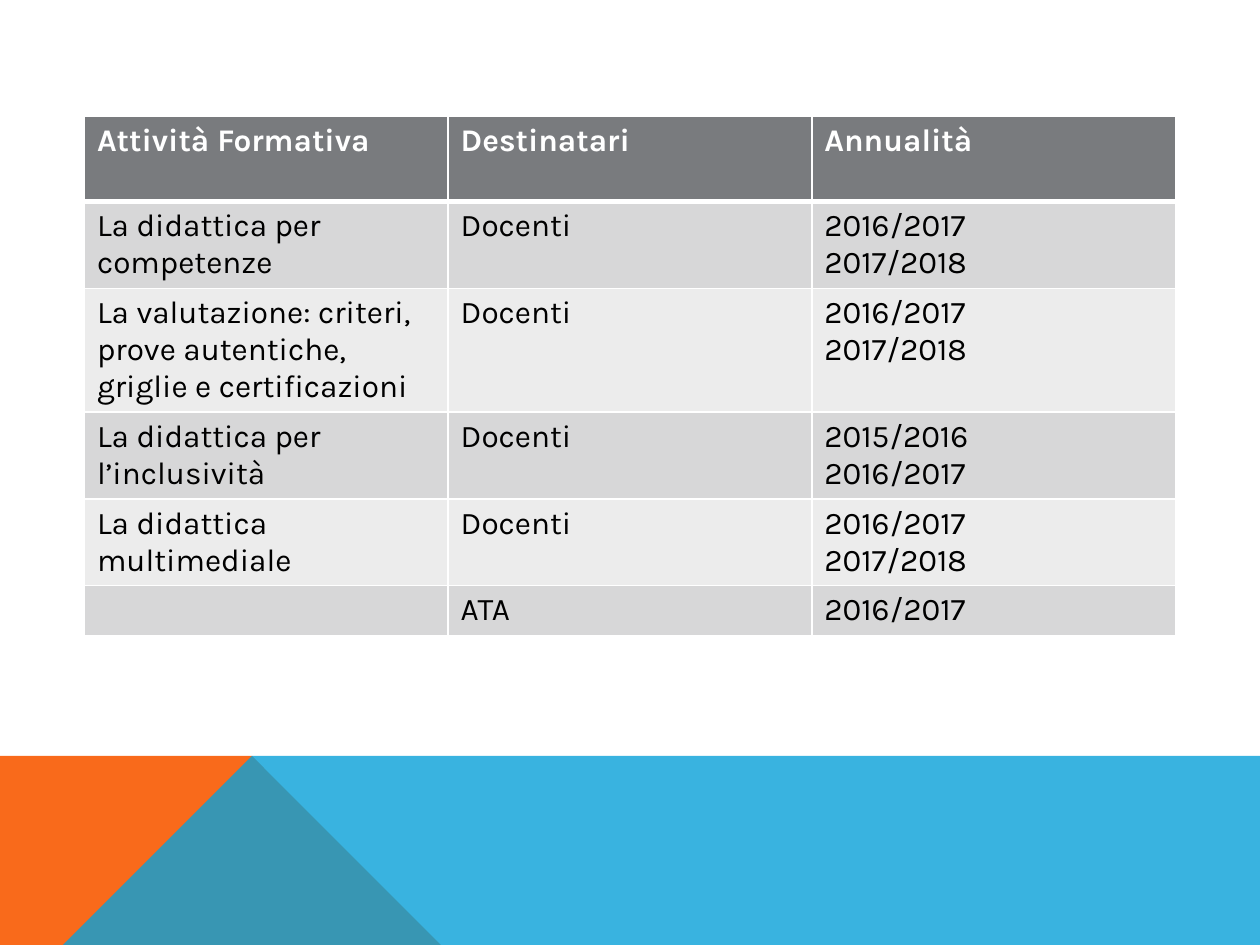
import pptx
import pptx.dml.color
import pptx.oxml.ns
import pptx.util
import lxml.etree

COLORS = {
    "header": "797B7E", "odd": "D7D7D8", "even": "ECECEC", "rule": "FFFFFF",
    "header_text": "FFFFFF", "text": "000000", "orange": "F96A1B", "blue": "08A1D9",
}
qn = pptx.oxml.ns.qn


def paint(fill, name):
    fill.solid()
    fill.fore_color.rgb = pptx.dml.color.RGBColor.from_string(COLORS[name])


def add_border(cell, side, points):
    line = lxml.etree.SubElement(cell._tc.get_or_add_tcPr(), qn("a:ln" + side),
                                 w=str(int(pptx.util.Pt(points))))
    solid = lxml.etree.SubElement(line, qn("a:solidFill"))
    lxml.etree.SubElement(solid, qn("a:srgbClr"), val=COLORS["rule"])


deck = pptx.Presentation()
deck.slide_width = pptx.util.Inches(10)
deck.slide_height = pptx.util.Inches(7.5)
slide = deck.slides.add_slide(deck.slide_layouts[6])

# Coloured band along the bottom, meeting at a common peak
width, bottom, band_top, peak = 10, 7.5, 5.52, 2.23
band = [
    ("orange", 100, [(0, bottom), (0, band_top), (peak, band_top), (3.91, bottom)]),
    ("blue", 80, [(0, bottom), (peak, band_top), (width, band_top), (width, bottom)]),
]
for color, opacity, corners in band:
    outline = slide.shapes.build_freeform(*corners[0], scale=pptx.util.Inches(1))
    outline.add_line_segments(corners[1:], close=True)
    panel = outline.convert_to_shape()
    panel.shadow.inherit = False
    panel.line.fill.background()
    paint(panel.fill, color)
    if opacity < 100:
        tint = panel._element.spPr.find(qn("a:solidFill")).find(qn("a:srgbClr"))
        lxml.etree.SubElement(tint, qn("a:alpha"), val=str(opacity * 1000))

# Training plan: activity, audience, school years
plan = [
    ("Attività Formativa", "Destinatari", "Annualità"),
    ("La didattica per competenze", "Docenti", "2016/2017\n2017/2018"),
    ("La valutazione: criteri, prove autentiche, griglie e certificazioni",
     "Docenti", "2016/2017\n2017/2018"),
    ("La didattica per l’inclusività", "Docenti", "2015/2016\n2016/2017"),
    ("La didattica multimediale", "Docenti", "2016/2017\n2017/2018"),
    ("", "ATA", "2016/2017"),
]
row_heights = [0.68, 0.69, 0.98, 0.69, 0.68, 0.4]
table = slide.shapes.add_table(
    len(plan), len(plan[0]), pptx.util.Inches(0.67), pptx.util.Inches(0.92),
    pptx.util.Inches(8.66), pptx.util.Inches(sum(row_heights))).table

for row, (entries, height) in enumerate(zip(plan, row_heights)):
    table.rows[row].height = pptx.util.Inches(height)
    is_header = row == 0
    for column, entry in enumerate(entries):
        cell = table.cell(row, column)
        cell.text = entry
        for side in "LRTB":
            thick = (is_header and side == "B") or (row == 1 and side == "T")
            add_border(cell, side, 3 if thick else 1)
        paint(cell.fill, "header" if is_header else "odd" if row % 2 else "even")
        for paragraph in cell.text_frame.paragraphs:
            paragraph.font.name = "Karla"
            paragraph.font.size = pptx.util.Pt(18)
            paragraph.font.bold = is_header
            paint(paragraph.font.fill, "header_text" if is_header else "text")

deck.save("out.pptx")
